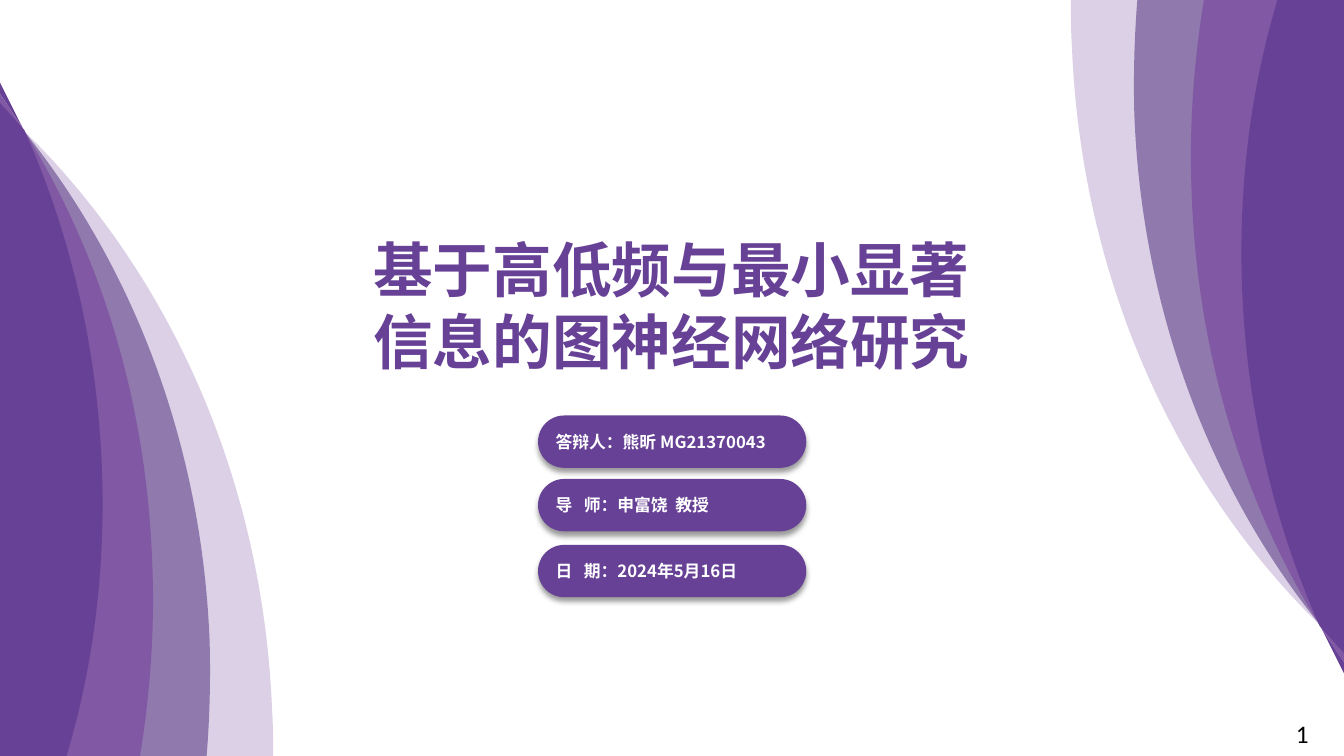
"""Build the thesis defence title slide with purple waves in two corners."""
from dataclasses import dataclass

import lxml.etree
import pptx
import pptx.dml.color
import pptx.enum.shapes
import pptx.enum.text
import pptx.oxml.ns
import pptx.presentation
import pptx.shapes.autoshape
import pptx.slide
import pptx.text.text
import pptx.util

Cm = pptx.util.Cm
Point = tuple[float, float]


@dataclass(frozen=True)
class Theme:
    purple: str = "674196"
    violet: str = "8058A3"
    mauve: str = "9079AD"
    lilac: str = "DBD0E6"
    pale_grey: str = "DDE3E5"
    grey: str = "D0D6D8"
    white: str = "FFFFFF"
    black: str = "000000"
    heading_font: str = "Noto Sans CJK SC"
    number_font: str = "Calibri"
    title_size: float = 42.6
    label_size: float = 12
    number_size: float = 18


@dataclass(frozen=True)
class Band:
    """A wave: straight corners, then cubic curves, then straight corners; lengths in inches."""
    colour: str
    corners: tuple[Point, ...]
    curves: tuple[tuple[Point, Point, Point], ...] = ()
    ending: tuple[Point, ...] = ()


@dataclass(frozen=True)
class Label:
    """A pill whose text pieces are separated by spaces widened by the given points."""
    top: float
    pieces: tuple[str, ...]
    widening: tuple[float, ...] = ()


THEME = Theme()
CORNER = (0, 7.5)
BANDS = (
    Band(THEME.lilac, (CORNER, (2.71, 7.5)),
         (((2.71, 7.35), (2.71, 7.2), (2.7, 7.05)), ((2.61, 4.74), (1.67, 2.7), (0.25, 1.31))),
         ((0, 1.08),)),
    Band(THEME.mauve, (CORNER, (2.05, 7.5)),
         (((2.08, 7.13), (2.09, 6.75), (2.08, 6.37)), ((2, 4.26), (1.21, 2.38), (0, 1.02)))),
    Band(THEME.pale_grey, ((0.22, 1.26), (0.23, 1.29), (0.25, 1.31))),
    Band(THEME.grey, ((0.24, 1.3), (0.26, 1.33), (0.25, 1.31))),
    Band(THEME.violet, (CORNER, (1.39, 7.5)),
         (((1.49, 6.88), (1.54, 6.23), (1.51, 5.56)), ((1.45, 3.98), (1, 2.53), (0.26, 1.33))),
         ((0.24, 1.29), (0, 1.02))),
    Band(THEME.purple, ((0, 0.82), (0, 0.93), (0.22, 1.26))),
    Band(THEME.violet, ((0, 0.93), (0, 1.02), (0.24, 1.3), (0.22, 1.26))),
    Band(THEME.purple, (CORNER, (0.66, 7.5)),
         (((0.93, 6.6), (1.05, 5.63), (1.01, 4.62)), ((0.96, 3.42), (0.69, 2.29), (0.24, 1.29))),
         ((0, 1.02),)),
)
TITLE_LINES = ("基于高低频与最小显著", "信息的图神经网络研究")
LABELS = (
    Label(10.47, ("答辩人：熊昕", "MG21370043"), (0,)),
    Label(12.07, ("导", "师：申富饶", "教授"), (5.4, 2.7)),
    Label(13.73, ("日", "期：2024年5月16日"), (5.4,)),
)


def rgb(colour: str) -> pptx.dml.color.RGBColor:
    return pptx.dml.color.RGBColor.from_string(colour)


def add_run(paragraph: pptx.text.text._Paragraph, text: str, size: float, colour: str,
            font_name: str, bold: bool = False, widening: float = 0) -> None:
    run = paragraph.add_run()
    run.text = text
    run.font.size = pptx.util.Pt(size)
    run.font.bold = bold
    run.font.color.rgb = rgb(colour)
    run.font.name = font_name
    properties = run.font._element
    east_asian = lxml.etree.SubElement(properties, pptx.oxml.ns.qn("a:ea"))
    east_asian.set("typeface", font_name)
    if widening:
        properties.set("spc", str(round(widening * 100)))


def paint(shape: pptx.shapes.autoshape.Shape, colour: str) -> None:
    shape.shadow.inherit = False
    shape.fill.solid()
    shape.fill.fore_color.rgb = rgb(colour)
    shape.line.fill.background()


def bend_edges(shape: pptx.shapes.autoshape.Shape, band: Band) -> None:
    """Merge each three straight segments of a curve into one cubic segment."""
    segments = list(shape._element.iter(pptx.oxml.ns.qn("a:lnTo")))
    first = len(band.corners) - 1
    for index in range(len(band.curves)):
        start = first + 3 * index
        trio = segments[start:start + 3]
        cubic = lxml.etree.Element(pptx.oxml.ns.qn("a:cubicBezTo"))
        trio[0].addprevious(cubic)
        for segment in trio:
            cubic.append(segment[0])
            segment.getparent().remove(segment)


def add_band(slide: pptx.slide.Slide, band: Band, width: int, height: int, turned: bool) -> None:
    handles = [point for curve in band.curves for point in curve]
    outline = [*band.corners, *handles, *band.ending]
    points = [(Cm(2.54 * x), Cm(2.54 * y)) for x, y in outline]
    if turned:
        points = [(width - x, height - y) for x, y in points]
    builder = slide.shapes.build_freeform(*points[0])
    builder.add_line_segments(points[1:], close=True)
    shape = builder.convert_to_shape()
    bend_edges(shape, band)
    paint(shape, band.colour)


def add_title(slide: pptx.slide.Slide) -> None:
    title = slide.shapes.title
    title.left, title.top, title.width, title.height = Cm(9.07), Cm(5.74), Cm(15.7), Cm(7.54)
    frame = title.text_frame
    frame.word_wrap = False
    frame.auto_size = pptx.enum.text.MSO_AUTO_SIZE.NONE
    frame.vertical_anchor = pptx.enum.text.MSO_ANCHOR.TOP
    for index, line in enumerate(TITLE_LINES):
        paragraph = frame.add_paragraph() if index else frame.paragraphs[0]
        paragraph.alignment = pptx.enum.text.PP_ALIGN.CENTER
        paragraph.line_spacing = 1.0
        paragraph.space_before = pptx.util.Pt(0)
        add_run(paragraph, line, THEME.title_size, THEME.purple, THEME.heading_font, True)


def add_shadow(shape: pptx.shapes.autoshape.Shape) -> None:
    effects = shape._element.spPr.find(pptx.oxml.ns.qn("a:effectLst"))
    shadow = lxml.etree.SubElement(effects, pptx.oxml.ns.qn("a:outerShdw"))
    for name, value in (("blurRad", pptx.util.Pt(4)), ("dist", pptx.util.Pt(3)),
                        ("dir", 5400000), ("algn", "t"), ("rotWithShape", 0)):
        shadow.set(name, str(value))
    colour = lxml.etree.SubElement(shadow, pptx.oxml.ns.qn("a:srgbClr"))
    colour.set("val", THEME.black)
    lxml.etree.SubElement(colour, pptx.oxml.ns.qn("a:alpha")).set("val", "40000")


def add_label(slide: pptx.slide.Slide, label: Label) -> None:
    pill = slide.shapes.add_shape(pptx.enum.shapes.MSO_SHAPE.ROUNDED_RECTANGLE,
                                  Cm(13.56), Cm(label.top), Cm(6.76), Cm(1.32))
    pill.adjustments[0] = 0.5
    paint(pill, THEME.purple)
    add_shadow(pill)
    pill.text_frame.vertical_anchor = pptx.enum.text.MSO_ANCHOR.MIDDLE
    paragraph = pill.text_frame.paragraphs[0]
    paragraph.alignment = pptx.enum.text.PP_ALIGN.LEFT
    style = (THEME.label_size, THEME.white, THEME.heading_font, True)
    for index, piece in enumerate(label.pieces):
        if index:
            add_run(paragraph, " ", *style, widening=label.widening[index - 1])
        add_run(paragraph, piece, *style)


def add_slide_number(slide: pptx.slide.Slide) -> None:
    box = slide.shapes.add_textbox(Cm(32.41), Cm(17.98), Cm(1.4), Cm(1.02))
    box.text_frame.word_wrap = True
    add_run(box.text_frame.paragraphs[0], "1", THEME.number_size, THEME.black, THEME.number_font)


def main() -> None:
    presentation = pptx.Presentation()
    presentation.slide_width, presentation.slide_height = Cm(33.87), Cm(19.05)
    slide = presentation.slides.add_slide(presentation.slide_layouts[5])
    for turned in (False, True):
        for band in BANDS:
            add_band(slide, band, presentation.slide_width, presentation.slide_height, turned)
    add_title(slide)
    for label in LABELS:
        add_label(slide, label)
    add_slide_number(slide)
    presentation.save("out.pptx")


if __name__ == "__main__":
    main()
